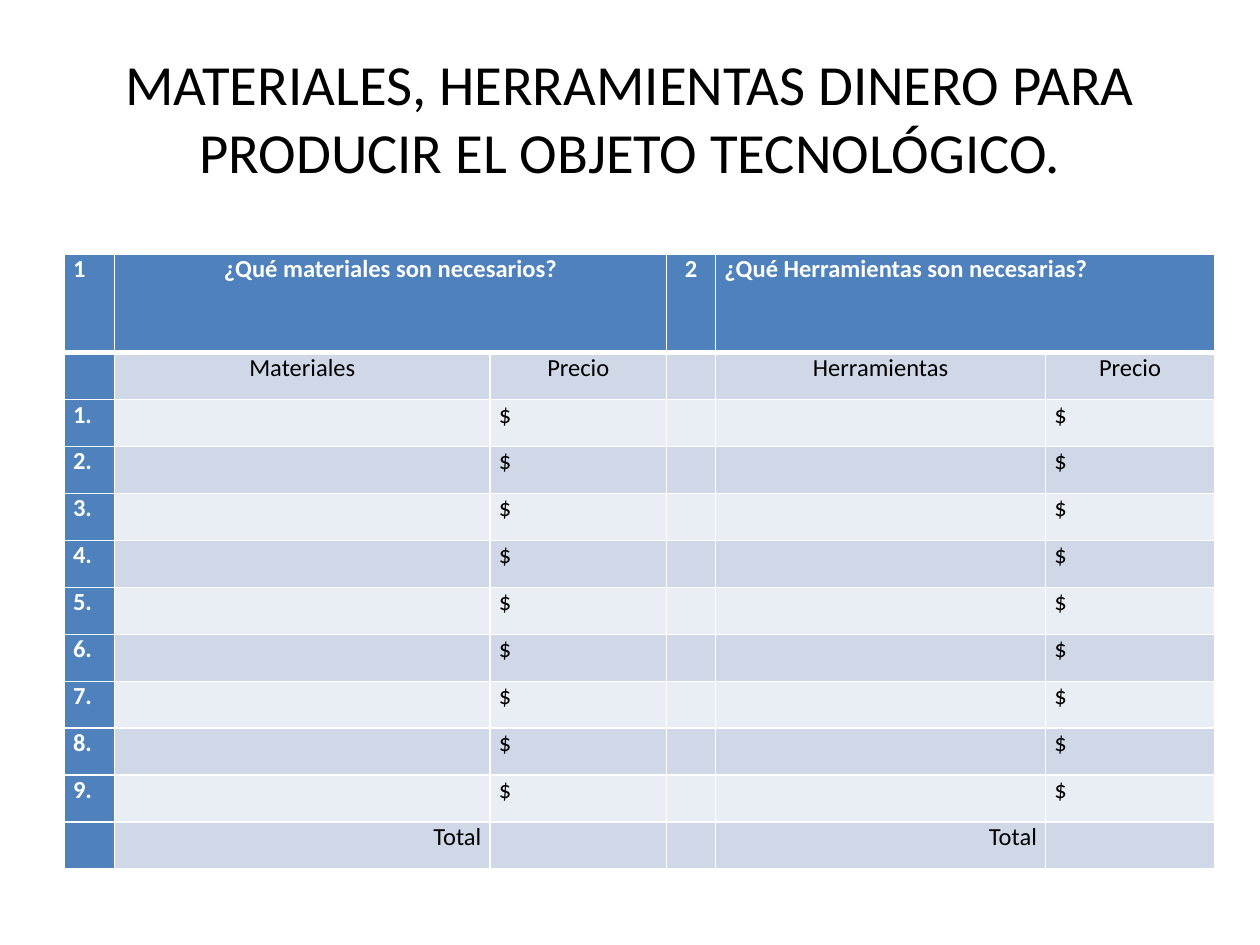
import dataclasses

import lxml.etree
import pptx
import pptx.dml.color
import pptx.enum.text
import pptx.oxml.ns
import pptx.util

Inches = pptx.util.Inches
Pt = pptx.util.Pt
RGB = pptx.dml.color.RGBColor.from_string
ALIGN = pptx.enum.text.PP_ALIGN
ANCHOR = pptx.enum.text.MSO_ANCHOR
qn = pptx.oxml.ns.qn


@dataclasses.dataclass(frozen=True)
class Theme:
    font: str = "Calibri"
    title_size: float = 32.4
    table_size: float = 14
    ink: str = "000000"
    paper: str = "FFFFFF"
    accent: str = "4F81BD"
    bands: tuple = ("D0D8E8", "E9EDF4")
    rule: float = 1
    heavy_rule: float = 3


THEME = Theme()
COLUMN_WIDTHS = (0.4, 2.98, 1.4, 0.39, 2.62, 1.34)
HEADER_HEIGHT = 0.78
ITEM_COUNT = 9
MERGED_COLUMNS = (1, 4)

HEADER = ("1", "¿Qué materiales son necesarios?", "",
          "2", "¿Qué Herramientas son necesarias?", "")
SUBHEADER = ("", "Materiales", "Precio", "", "Herramientas", "Precio")
ITEMS = [(f"{number}.", "", "$", "", "", "$") for number in range(1, ITEM_COUNT + 1)]
TOTALS = ("", "Total", "", "", "Total", "")
ROWS = [HEADER, SUBHEADER, *ITEMS, TOTALS]


def write(frame, text, size, color, bold, align):
    paragraph = frame.paragraphs[0]
    paragraph.alignment = align
    run = paragraph.add_run()
    run.text = text
    for name, value in {"name": THEME.font, "size": Pt(size), "bold": bold}.items():
        setattr(run.font, name, value)
    run.font.color.rgb = RGB(color)


def alignment(row, column):
    if row == 0:
        return ALIGN.CENTER if column in (1, 3) else ALIGN.LEFT
    if row == 1:
        return ALIGN.CENTER
    return ALIGN.RIGHT if row == len(ROWS) - 1 else ALIGN.LEFT


def set_borders(cell, row):
    """Rule the cell in white, with a heavier line under the header."""
    widths = {
        "a:lnL": THEME.rule,
        "a:lnR": THEME.rule,
        "a:lnT": THEME.heavy_rule if row == 1 else THEME.rule,
        "a:lnB": THEME.heavy_rule if row == 0 else THEME.rule,
    }
    properties = cell._tc.get_or_add_tcPr()
    for position, (side, width) in enumerate(widths.items()):
        line = lxml.etree.Element(qn(side), w=str(Pt(width)))
        fill = lxml.etree.SubElement(line, qn("a:solidFill"))
        lxml.etree.SubElement(fill, qn("a:srgbClr"), val=THEME.paper)
        properties.insert(position, line)


def format_cell(cell, row, column, text):
    emphasized = row == 0 or column == 0
    margins = {"margin_left": 0.07, "margin_right": 0.07,
               "margin_top": 0, "margin_bottom": 0}
    for name, value in margins.items():
        setattr(cell, name, Inches(value))
    cell.vertical_anchor = ANCHOR.TOP
    cell.fill.solid()
    band = THEME.bands[(row - 1) % 2]
    cell.fill.fore_color.rgb = RGB(THEME.accent if emphasized else band)
    set_borders(cell, row)
    if text:
        write(cell.text_frame, text, THEME.table_size,
              THEME.paper if emphasized else THEME.ink,
              emphasized, alignment(row, column))


def place_title(slide, left, top, width, height):
    heading = slide.shapes.title
    box = {"left": left, "top": top, "width": width, "height": height}
    for name, value in box.items():
        setattr(heading, name, Inches(value))
    heading.text_frame.word_wrap = True
    heading.text_frame.vertical_anchor = ANCHOR.MIDDLE
    write(heading.text_frame,
          "MATERIALES, HERRAMIENTAS DINERO PARA PRODUCIR EL OBJETO TECNOLÓGICO.",
          THEME.title_size, THEME.ink, False, ALIGN.CENTER)


def place_budget(slide, left, top, width, height):
    budget = slide.shapes.add_table(
        len(ROWS), len(COLUMN_WIDTHS),
        Inches(left), Inches(top), Inches(width), Inches(height)).table
    budget.first_col = True
    budget.horz_banding = False
    for column, share in zip(budget.columns, COLUMN_WIDTHS):
        column.width = Inches(width * share / sum(COLUMN_WIDTHS))
    body_height = (height - HEADER_HEIGHT) / (len(ROWS) - 1)
    for index, texts in enumerate(ROWS):
        budget.rows[index].height = Inches(body_height if index else HEADER_HEIGHT)
        for column, text in enumerate(texts):
            format_cell(budget.cell(index, column), index, column, text)
    for column in MERGED_COLUMNS:
        budget.cell(0, column).merge(budget.cell(0, column + 1))


def main():
    deck = pptx.Presentation()
    deck.slide_width = Inches(10)
    deck.slide_height = Inches(7.5)
    slide = deck.slides.add_slide(deck.slide_layouts.get_by_name("Title Only"))
    place_title(slide, 0.5, 0.3, 9, 1.25)
    place_budget(slide, 0.51, 2.02, 9.13, 4.88)
    deck.save("out.pptx")


if __name__ == "__main__":
    main()
